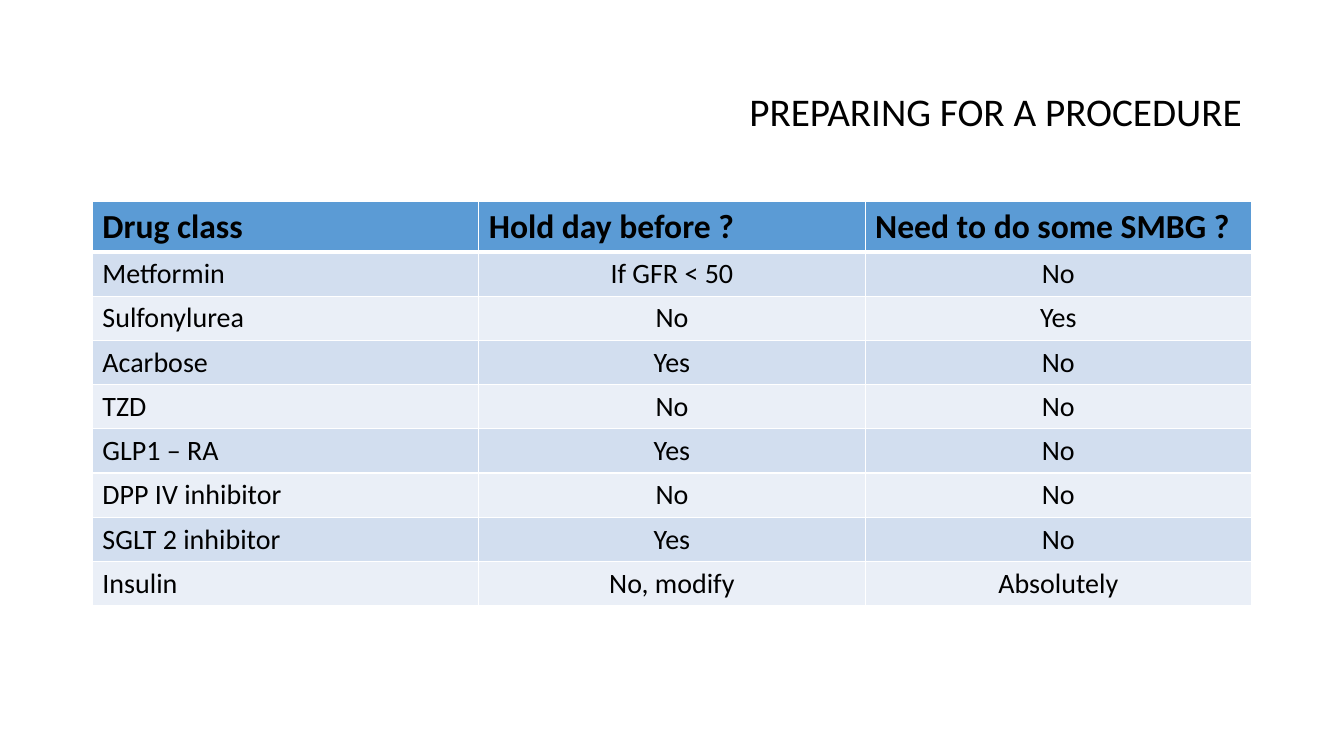
from pptx import Presentation
from pptx.dml.color import RGBColor
from pptx.enum.text import MSO_ANCHOR, PP_ALIGN
from pptx.oxml.ns import qn
from pptx.util import Pt
from lxml.etree import SubElement

ROWS = [
    ("Drug class", "Hold day before ?", "Need to do some SMBG ?"),
    ("Metformin", "If GFR < 50", "No"),
    ("Sulfonylurea", "No", "Yes"),
    ("Acarbose", "Yes", "No"),
    ("TZD", "No", "No"),
    ("GLP1 – RA", "Yes", "No"),
    ("DPP IV inhibitor", "No", "No"),
    ("SGLT 2 inhibitor", "Yes", "No"),
    ("Insulin", "No, modify", "Absolutely"),
]


def rgb(value):
    return RGBColor.from_string(value)


class SlideBuilder:
    """Hold the style and the current slide, and draw its elements."""

    font = "Calibri"
    ink = "000000"
    rule = "FFFFFF"
    header = "5B9BD5"
    bands = ("D2DEEF", "EAEFF7")

    def __init__(self, prs):
        self.s = prs.slides.add_slide(prs.slide_layouts[6])

    def set_text(self, tf, text, size, align, bold=False):
        tf.text = text
        p = tf.paragraphs[0]
        p.alignment = align
        r = p.runs[0]
        r.font.name = self.font
        r.font.size = Pt(size)
        r.font.bold = bold
        r.font.color.rgb = rgb(self.ink)
        return p

    def title(self, text, x, y, w, h):
        tf = self.s.shapes.add_textbox(Pt(x), Pt(y), Pt(w), Pt(h)).text_frame
        tf.word_wrap = True
        tf.vertical_anchor = MSO_ANCHOR.MIDDLE
        self.set_text(tf, text, 28, PP_ALIGN.RIGHT).line_spacing = 0.9

    def borders(self, cell, widths):
        tc_pr = cell._tc.get_or_add_tcPr()
        for side, width in widths.items():
            ln = SubElement(tc_pr, qn(f"a:ln{side}"), w=str(Pt(width)))
            fill = SubElement(ln, qn("a:solidFill"))
            SubElement(fill, qn("a:srgbClr"), val=self.rule)

    def table(self, rows, x, y, w, header_h, row_h):
        n_cols = len(rows[0])
        h = header_h + row_h * (len(rows) - 1)
        table = self.s.shapes.add_table(
            len(rows), n_cols, Pt(x), Pt(y), Pt(w), Pt(h)).table
        for col in table.columns:
            col.width = Pt(w / n_cols)
        for i, values in enumerate(rows):
            head = i == 0
            table.rows[i].height = Pt(header_h if head else row_h)
            color = self.header if head else self.bands[(i - 1) % 2]
            for j, value in enumerate(values):
                cell = table.cell(i, j)
                align = PP_ALIGN.LEFT if head or j == 0 else PP_ALIGN.CENTER
                self.set_text(cell.text_frame, value, 24 if head else 20, align, head)
                self.borders(cell, {"L": 1, "R": 1, "T": 3 if i == 1 else 1,
                                    "B": 3 if head else 1})
                cell.fill.solid()
                cell.fill.fore_color.rgb = rgb(color)


def main():
    prs = Presentation()
    prs.slide_width, prs.slide_height = Pt(960), Pt(540)
    slide = SlideBuilder(prs)
    slide.title("PREPARING FOR A PROCEDURE", 66, 28.8, 828, 104.4)
    slide.table(ROWS, 66, 144, 828, 36, 31.6)
    prs.save("out.pptx")


if __name__ == "__main__":
    main()
